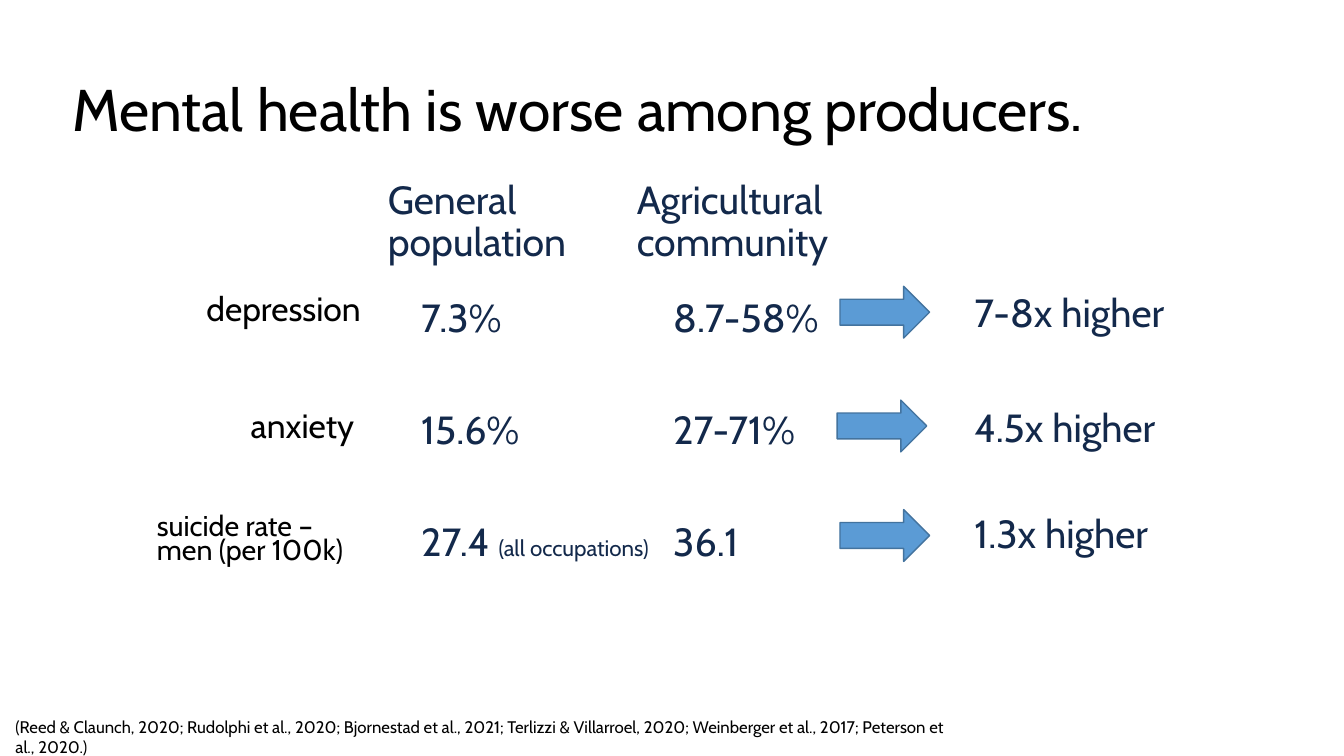
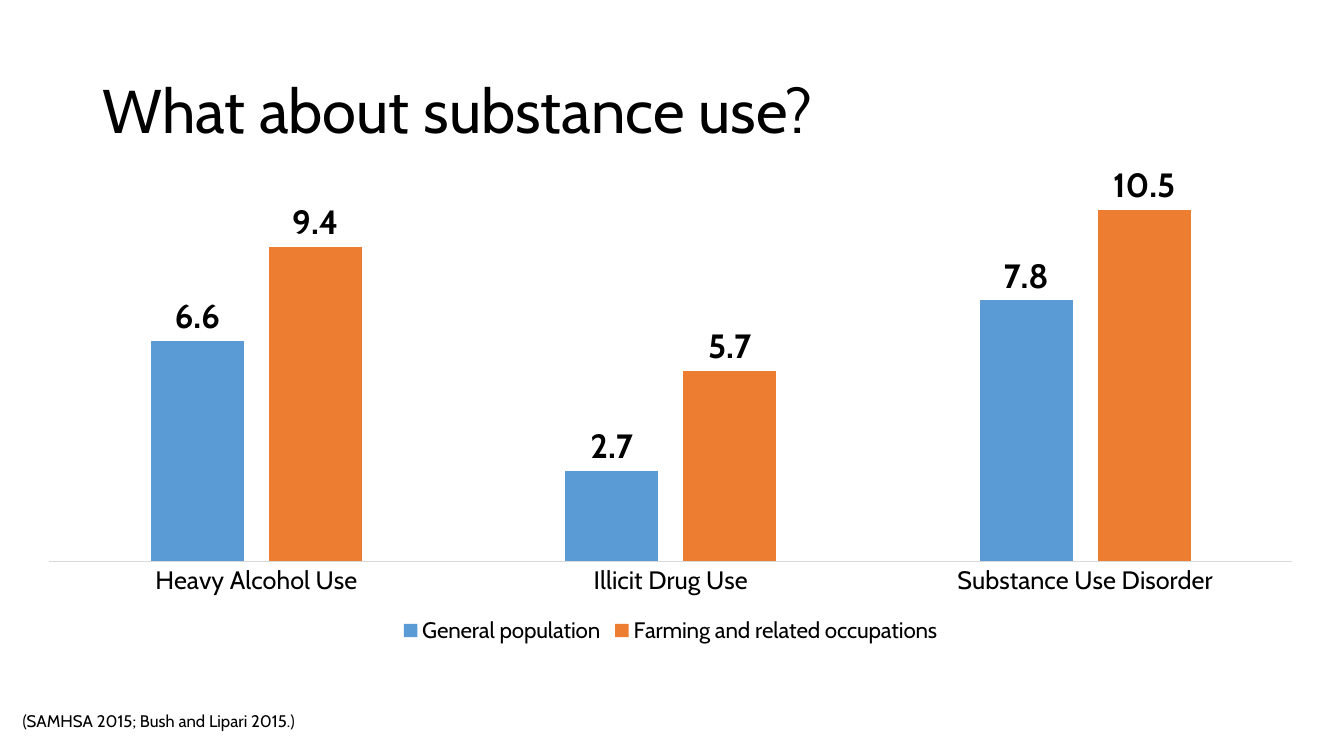
import pptx
import pptx.chart.data
import pptx.dml.color
import pptx.enum.chart
import pptx.enum.shapes
import pptx.enum.text
import pptx.util

Pt = pptx.util.Pt
ANCHOR = pptx.enum.text.MSO_ANCHOR

FONT = "Cabin"
BLACK, NAVY = "000000", "13294B"
BLUE, BLUE_EDGE, ORANGE, AXIS_GREY = "5B9BD5", "43739E", "ED7D31", "D9D9D9"

FIRST_ROW, ROW_PITCH = 226, 80.3
GENERAL_X, FARM_X, ARROW_X, CLAIM_X = 293.8, 473.8, 600, 689

# label, left edge, bottom edge, size, line spacing
LABELS = [
    ("depression", 140.4, 238.3, 24, 0.9),
    ("anxiety", 172, 322, 24, 0.9),
    ("suicide rate – men (per 100k)", 105, 407.5, 20.4, 0.7),
]
GENERAL = [("7.3%", ""), ("15.6%", ""), ("27.4 ", "(all occupations)")]
FARM = ["8.7-58%", "27-71%", "36.1"]
# claim, its centre height, arrow's centre height, arrow's shift
CLAIMS = [
    ("7-8x higher", 222.5, 223, 0),
    ("4.5x higher", 305, 304.3, -2),
    ("1.3x higher", 380.5, 382.5, 0),
]


def rgb(value):
    return pptx.dml.color.RGBColor.from_string(value)


def style(font, size, color, bold=False):
    font.name, font.size, font.bold = FONT, Pt(size), bold
    font.color.rgb = rgb(color)


def add_text(s, box, runs, color=BLACK, anchor=ANCHOR.TOP, spacing=1.0):
    """Place one paragraph in box; runs are (text, size) pairs."""
    tf = s.shapes.add_textbox(*map(Pt, box)).text_frame
    tf.word_wrap = True
    tf.vertical_anchor = anchor
    p = tf.paragraphs[0]
    p.line_spacing = spacing
    for text, size in runs:
        r = p.add_run()
        r.text = text
        style(r.font, size, color)


def add_centred(s, left, middle, width, runs):
    add_text(s, (left, middle - 20, width, 40), runs, NAVY, ANCHOR.MIDDLE)


def add_title(s, box, text, size):
    add_text(s, box, [(text, size)], anchor=ANCHOR.MIDDLE, spacing=0.9)


def add_source(s, box, text):
    add_text(s, box, [(text, 12)])


def add_arrow(s, left, middle, width=64, height=37):
    sp = s.shapes.add_shape(pptx.enum.shapes.MSO_SHAPE.RIGHT_ARROW,
                            Pt(left), Pt(middle - height / 2), Pt(width), Pt(height))
    sp.shadow.inherit = False
    sp.fill.solid()
    sp.fill.fore_color.rgb = rgb(BLUE)
    sp.line.color.rgb = rgb(BLUE_EDGE)
    sp.line.width = Pt(1)


def add_comparison(s):
    for left, width, head in ((270, 149, "General population"),
                              (447.8, 163.5, "Agricultural community")):
        add_text(s, (left, 125.3, width, 64), [(head, 28)], NAVY, spacing=0.9)
    for text, left, bottom, size, spacing in LABELS:
        add_text(s, (left, bottom - 44, 268 - left, 44), [(text, size)],
                 anchor=ANCHOR.BOTTOM, spacing=spacing)
    for i, ((value, note), farm) in enumerate(zip(GENERAL, FARM)):
        middle = FIRST_ROW + i * ROW_PITCH
        runs = [(value, 28)] + ([(note, 16)] if note else [])
        add_centred(s, GENERAL_X, middle, 274, runs)
        add_centred(s, FARM_X, middle, 127, [(farm, 28)])
    for text, middle, arrow_middle, shift in CLAIMS:
        add_arrow(s, ARROW_X + shift, arrow_middle)
        add_centred(s, CLAIM_X, middle, 203, [(text, 28)])


def add_use_chart(s, box):
    data = pptx.chart.data.CategoryChartData()
    data.categories = ["Heavy Alcohol Use", "Illicit Drug Use", "Substance Use Disorder"]
    data.add_series("General population", (6.6, 2.7, 7.8))
    data.add_series("Farming and related occupations", (9.4, 5.7, 10.5))
    chart = s.shapes.add_chart(pptx.enum.chart.XL_CHART_TYPE.COLUMN_CLUSTERED,
                               *map(Pt, box), data).chart
    style(chart.font, 10, BLACK)
    chart.has_title = False
    chart.has_legend = True
    chart.legend.position = pptx.enum.chart.XL_LEGEND_POSITION.BOTTOM
    chart.legend.include_in_layout = False
    style(chart.legend.font, 16, BLACK)

    axis = chart.category_axis
    axis.major_tick_mark = pptx.enum.chart.XL_TICK_MARK.NONE
    axis.format.line.color.rgb = rgb(AXIS_GREY)
    axis.format.line.width = Pt(0.75)
    style(axis.tick_labels.font, 18, BLACK)
    values = chart.value_axis
    values.has_major_gridlines = False
    values.visible = False
    values.minimum_scale, values.maximum_scale = 0, 12

    plot = chart.plots[0]
    plot.vary_by_categories = False
    plot.gap_width, plot.overlap = 219, -27
    for series, color in zip(plot.series, (BLUE, ORANGE)):
        series.format.fill.solid()
        series.format.fill.fore_color.rgb = rgb(color)
        labels = series.data_labels
        labels.show_value = True
        labels.position = pptx.enum.chart.XL_LABEL_POSITION.OUTSIDE_END
        style(labels.font, 24, BLACK, bold=True)


def main():
    prs = pptx.Presentation()
    prs.slide_width, prs.slide_height = Pt(960), Pt(540)
    blank = prs.slide_layouts[6]

    s = prs.slides.add_slide(blank)
    add_title(s, (44.6, 28, 919, 104), "Mental health is worse among producers.", 42)
    add_comparison(s)
    add_source(s, (4, 508.3, 693, 22),
               "(Reed & Claunch, 2020; Rudolphi et al., 2020; Bjornestad et al., 2021; "
               "Terlizzi & Villarroel, 2020; Weinberger et al., 2017; Peterson et al., 2020.)")

    s = prs.slides.add_slide(blank)
    add_title(s, (66, 29, 828, 104), "What about substance use?", 44)
    add_use_chart(s, (16.6, 107.3, 925, 355.7))
    add_source(s, (9, 504, 257, 22), "(SAMHSA 2015; Bush and Lipari 2015.)")

    prs.save("out.pptx")


if __name__ == "__main__":
    main()
